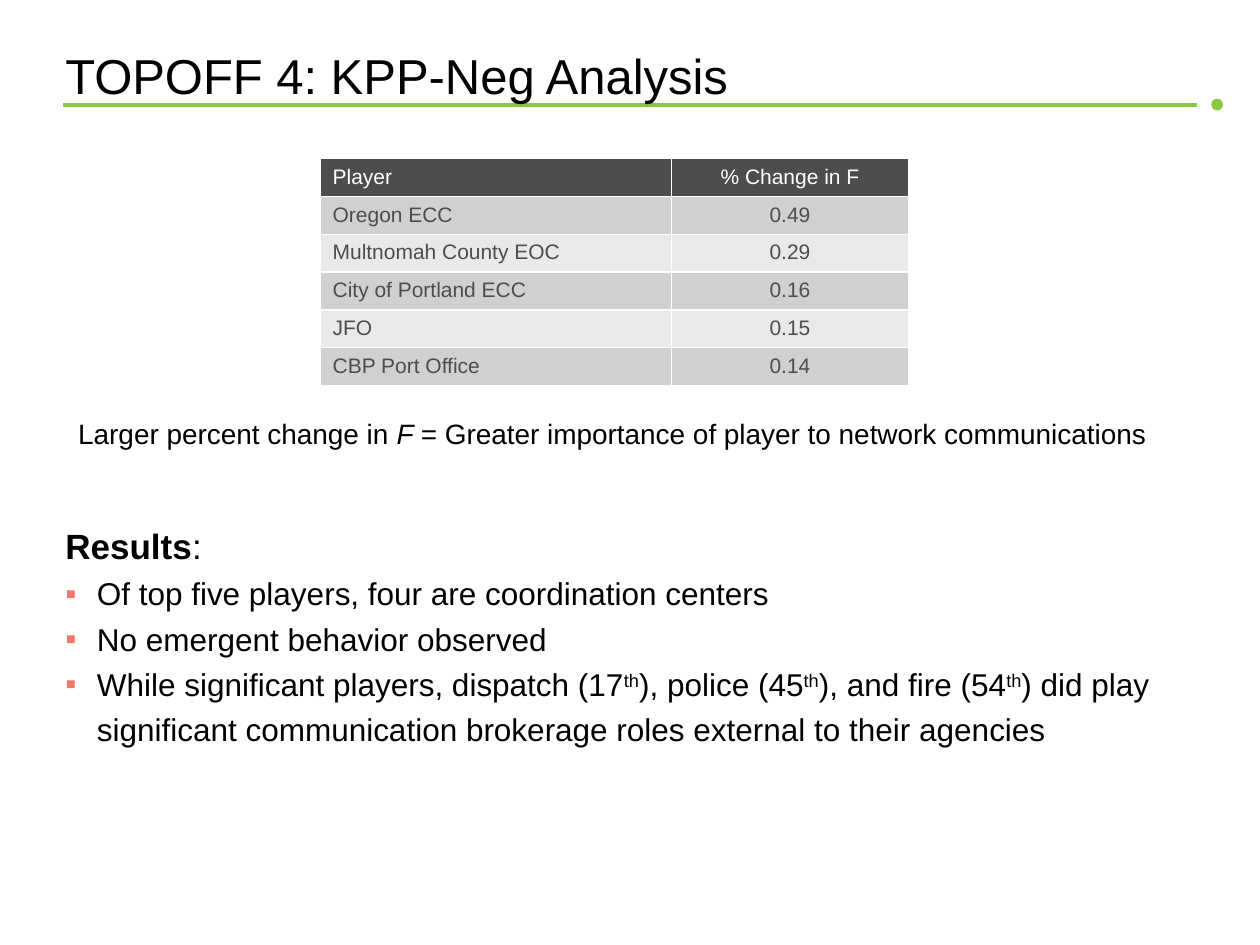
from lxml.etree import SubElement
from pptx import Presentation
from pptx.dml.color import RGBColor
from pptx.enum.shapes import MSO_CONNECTOR, MSO_SHAPE
from pptx.enum.text import MSO_ANCHOR, PP_ALIGN
from pptx.oxml.ns import qn
from pptx.util import Inches, Pt

INK = RGBColor(0x01, 0x01, 0x01)
GREEN = RGBColor(0x8C, 0xC7, 0x41)
CORAL = RGBColor(0xF0, 0x77, 0x6A)
WHITE = RGBColor(0xFF, 0xFF, 0xFF)
DARK = RGBColor(0x4D, 0x4D, 0x4D)
BANDS = RGBColor(0xD0, 0xD0, 0xD0), RGBColor(0xE9, 0xE9, 0xE9)

ROWS = [
    ("Player", "% Change in F"),
    ("Oregon ECC", "0.49"),
    ("Multnomah County EOC", "0.29"),
    ("City of Portland ECC", "0.16"),
    ("JFO", "0.15"),
    ("CBP Port Office", "0.14"),
]
RESULTS = [
    [("Of top five players, four are coordination centers", False)],
    [("No emergent behavior observed", False)],
    [("While significant players, dispatch (17", False), ("th", True),
     ("), police (45", False), ("th", True),
     ("), and fire (54", False), ("th", True),
     (") did play significant communication brokerage roles external to their agencies", False)],
]


def add_run(p, text, size, color=INK, bold=False, italic=False, raised=False):
    """Append one formatted run to a paragraph."""
    r = p.add_run()
    r.text = text
    r.font.name = "Arial"
    r.font.size = Pt(size)
    r.font.color.rgb = color
    r.font.bold = bold
    r.font.italic = italic
    if raised:
        r.font._element.set("baseline", "30000")


def add_text_frame(s, left, top, width, height):
    """Add a wrapping text box and return its text frame."""
    tf = s.shapes.add_textbox(left, top, width, height).text_frame
    tf.word_wrap = True
    return tf


def set_hanging(p, bullet=None):
    """Give a paragraph a hanging indent and an optional coloured bullet."""
    pPr = p._p.get_or_add_pPr()
    pPr.set("marL", str(Inches(0.25)))
    pPr.set("indent", str(-Inches(0.25)))
    if bullet:
        color = SubElement(pPr, qn("a:buClr"))
        SubElement(color, qn("a:srgbClr")).set("val", str(CORAL))
        SubElement(pPr, qn("a:buFont")).set("typeface", "Arial")
        SubElement(pPr, qn("a:buChar")).set("char", bullet)
    p.line_spacing = 1.2


def set_borders(cell):
    """Draw thin white borders on every side of a cell."""
    tcPr = cell._tc.get_or_add_tcPr()
    for i, side in enumerate(("lnL", "lnR", "lnT", "lnB")):
        ln = tcPr.makeelement(qn(f"a:{side}"), {"w": str(Pt(1))})
        fill = SubElement(ln, qn("a:solidFill"))
        SubElement(fill, qn("a:srgbClr")).set("val", str(WHITE))
        tcPr.insert(i, ln)


def add_title(s, left, top, width, height):
    """Add the title with its green rule and end dot."""
    y = top + Inches(0.6)
    rule = s.shapes.add_connector(MSO_CONNECTOR.STRAIGHT, Inches(0.5), y, Inches(9.5), y)
    rule.line.color.rgb = GREEN
    rule.line.width = Pt(2.25)
    SubElement(rule._element.spPr, qn("a:effectLst"))
    d = Inches(0.08)
    dot = s.shapes.add_shape(MSO_SHAPE.OVAL, Inches(9.62), y - d // 2, d, d)
    dot.shadow.inherit = False
    dot.fill.solid()
    dot.fill.fore_color.rgb = GREEN
    dot.line.color.rgb = GREEN
    dot.line.width = Pt(1)
    tf = add_text_frame(s, left, top, width, height)
    tf.vertical_anchor = MSO_ANCHOR.MIDDLE
    p = tf.paragraphs[0]
    p.line_spacing = 0.95
    add_run(p, "TOPOFF 4: KPP-Neg Analysis", 28)


def add_player_table(s, left, top, width, height):
    """Add the banded table of players and their change in F."""
    table = s.shapes.add_table(len(ROWS), 2, left, top, width, height).table
    table.columns[0].width = Inches(2.79)
    table.columns[1].width = width - Inches(2.79)
    for i, row in enumerate(ROWS):
        for j, text in enumerate(row):
            cell = table.cell(i, j)
            cell.vertical_anchor = MSO_ANCHOR.MIDDLE
            cell.fill.solid()
            cell.fill.fore_color.rgb = BANDS[(i - 1) % 2] if i else DARK
            set_borders(cell)
            p = cell.text_frame.paragraphs[0]
            p.alignment = PP_ALIGN.CENTER if j else PP_ALIGN.LEFT
            p.line_spacing = 0.95
            add_run(p, text, 12, DARK if i else WHITE)


def add_caption(s, left, top, width, height):
    """Add the centred reading note below the table."""
    p = add_text_frame(s, left, top, width, height).paragraphs[0]
    p.alignment = PP_ALIGN.CENTER
    p.line_spacing = 1.2
    add_run(p, "Larger percent change in ", 16)
    add_run(p, "F ", 16, italic=True)
    add_run(p, "= Greater importance of player to network communications", 16)


def add_results(s, left, top, width, height):
    """Add the results heading and its bulleted findings."""
    tf = add_text_frame(s, left, top, width, height)
    p = tf.paragraphs[0]
    set_hanging(p)
    add_run(p, "Results", 20, bold=True)
    add_run(p, ":", 20)
    for finding in RESULTS:
        p = tf.add_paragraph()
        set_hanging(p, "▪")
        for text, raised in finding:
            add_run(p, text, 18, raised=raised)


def main():
    """Build and save the slide."""
    prs = Presentation()
    prs.slide_width, prs.slide_height = Inches(10), Inches(7.5)
    s = prs.slides.add_slide(prs.slide_layouts[6])
    add_title(s, Inches(0.42), Inches(0.23), Inches(9.25), Inches(0.77))
    add_results(s, Inches(0.42), Inches(4.05), Inches(9.28), Inches(1.96))
    add_player_table(s, Inches(2.54), Inches(1.26), Inches(4.67), Inches(1.8))
    add_caption(s, Inches(0.42), Inches(3.2), Inches(8.88), Inches(0.42))
    prs.save("out.pptx")


if __name__ == "__main__":
    main()
